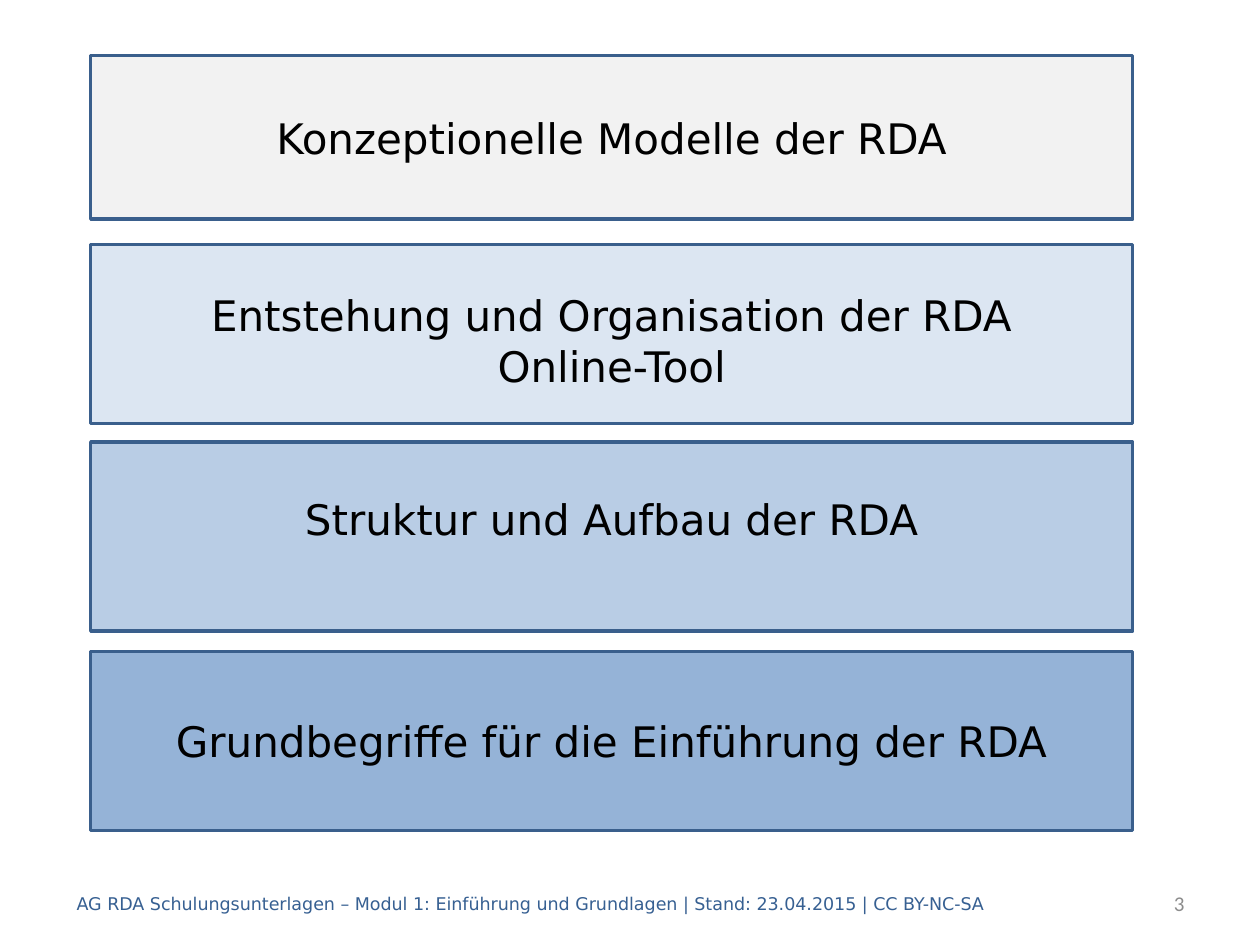
import pptx
import pptx.util
import pptx.dml.color
import pptx.enum.shapes
import pptx.enum.text

Inches = pptx.util.Inches
ALIGN = pptx.enum.text.PP_ALIGN
COLORS = {
    "line": "3A5F8C", "text": "000000", "foot": "376092", "page": "8C8C8C",
    "models": "F2F2F2", "origin": "DCE6F2", "layout": "B9CDE5", "terms": "95B3D7",
}
FONT = "DejaVu Sans"


def color(name):
    return pptx.dml.color.RGBColor.from_string(COLORS[name])


def write(shape, text, size, tint, align, font=FONT):
    """Fill a shape with vertically centred text, one paragraph a line."""
    frame = shape.text_frame
    frame.text = text
    frame.word_wrap = True
    frame.vertical_anchor = pptx.enum.text.MSO_ANCHOR.MIDDLE
    for para in frame.paragraphs:
        para.alignment = align
        for run in para.runs:
            run.font.size = pptx.util.Pt(size)
            run.font.name = font
            run.font.color.rgb = color(tint)


def add_band(slide, box, text, fill, top=0.05, bottom=0.05):
    """Draw a topic band; top and bottom are its text insets in inches."""
    band = slide.shapes.add_shape(
        pptx.enum.shapes.MSO_SHAPE.RECTANGLE, *map(Inches, box))
    band.shadow.inherit = False
    band.fill.solid()
    band.fill.fore_color.rgb = color(fill)
    band.line.color.rgb = color("line")
    band.line.width = pptx.util.Pt(2)
    write(band, text, 24, "text", ALIGN.CENTER)
    band.text_frame.margin_top = Inches(top)
    band.text_frame.margin_bottom = Inches(bottom)


def add_stack(slide, left, width):
    add_band(slide, (left, 0.44, width, 1.3),
             "Konzeptionelle Modelle der RDA", "models")
    add_band(slide, (left, 1.94, width, 1.42),
             "Entstehung und Organisation der RDA\nOnline-Tool", "origin", top=0.15)
    add_band(slide, (left, 3.51, width, 1.5),
             "Struktur und Aufbau der RDA", "layout", bottom=0.34)
    add_band(slide, (left, 5.17, width, 1.42),
             "Grundbegriffe für die Einführung der RDA", "terms")


def add_footer(slide, left, top, width, height):
    page = 1.04
    note = slide.shapes.add_textbox(
        *map(Inches, (left, top, 7.87, height)))
    write(note, "AG RDA Schulungsunterlagen – Modul 1: Einführung und Grundlagen"
          " | Stand: 23.04.2015 | CC BY-NC-SA", 10, "foot", ALIGN.LEFT)
    number = slide.shapes.add_textbox(
        *map(Inches, (left + width - page, top, page, height)))
    write(number, "3", 12, "page", ALIGN.RIGHT, "Calibri")


def main():
    deck = pptx.Presentation()
    deck.slide_width, deck.slide_height = Inches(10), Inches(7.5)
    slide = deck.slides.add_slide(deck.slide_layouts[6])
    add_footer(slide, 0.51, 6.97, 8.99, 0.4)
    add_stack(slide, 0.72, 8.27)
    deck.save("out.pptx")


if __name__ == "__main__":
    main()
